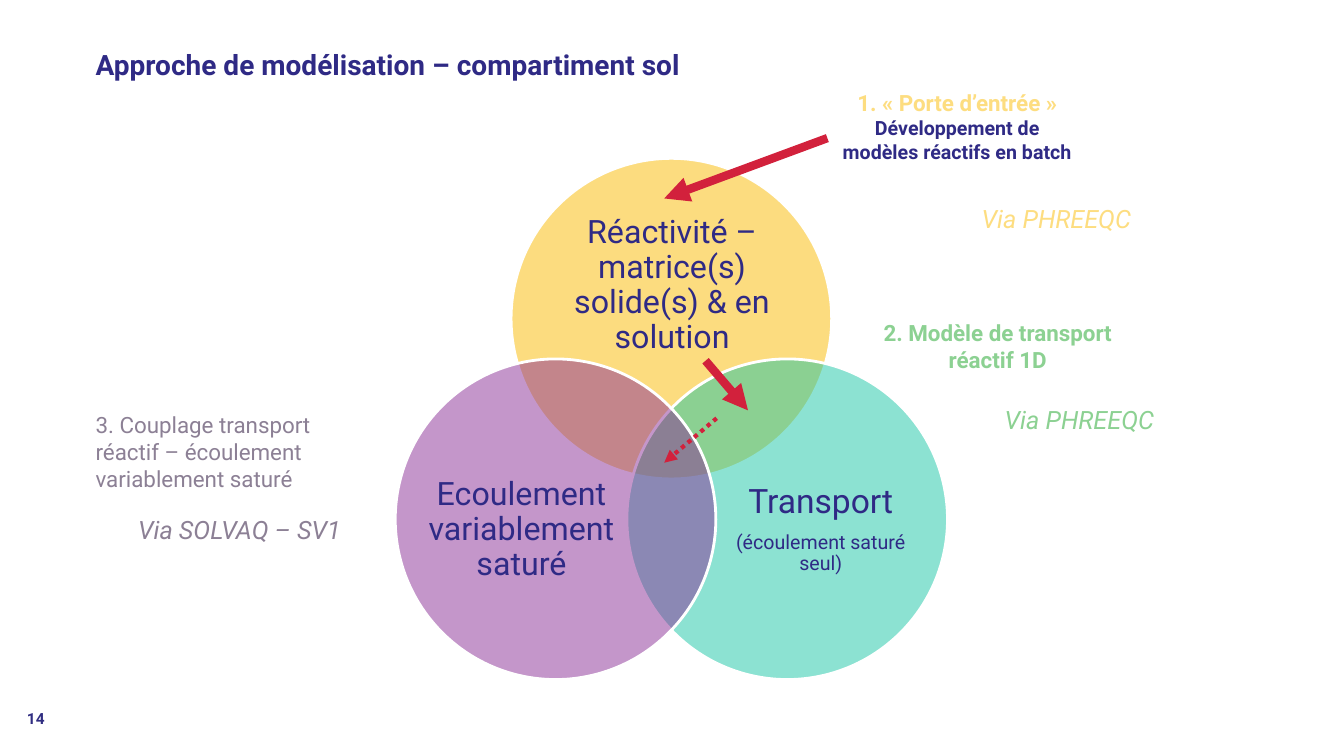
from dataclasses import dataclass
from math import cos, radians, sin

from lxml.etree import SubElement
from pptx import Presentation
from pptx.dml.color import RGBColor
from pptx.enum.dml import MSO_LINE
from pptx.enum.shapes import MSO_CONNECTOR, MSO_SHAPE
from pptx.enum.text import MSO_ANCHOR, PP_ALIGN
from pptx.oxml.ns import qn
from pptx.util import Cm, Pt


@dataclass(frozen=True)
class Theme:
    font: str = "Roboto"
    navy: str = "2F2A85"
    number_navy: str = "312E82"
    white: str = "FFFFFF"
    red: str = "D2213C"
    reactivity: str = "FBBA00"
    transport: str = "1BC6A6"
    flow: str = "8B2F97"
    yellow: str = "FDDD80"
    green: str = "8CD192"
    mauve: str = "8C8095"
    title: int = 20
    transport_name: int = 24
    circle_name: int = 23
    tool: int = 18
    step: int = 16
    detail: int = 14
    number: int = 11


class SlideBuilder:
    def __init__(self, slide, theme):
        self.shapes = slide.shapes
        self.theme = theme

    def circle(self, center_x, center_y, diameter, color):
        disc = self.shapes.add_shape(
            MSO_SHAPE.OVAL, Cm(center_x - diameter / 2), Cm(center_y - diameter / 2),
            Cm(diameter), Cm(diameter))
        disc.shadow.inherit = False
        disc.fill.solid()
        disc.fill.fore_color.rgb = RGBColor.from_string(color)
        tint = disc._element.spPr.find(qn("a:solidFill"))[0]
        SubElement(tint, qn("a:alpha"), val="50000")
        disc.line.color.rgb = RGBColor.from_string(self.theme.white)
        disc.line.width = Pt(2)

    def text(self, box, lines, align=PP_ALIGN.LEFT, anchor=MSO_ANCHOR.TOP,
             inset=True, **paragraph_format):
        """Write lines of (text, font format) into a box of left, top, width, height."""
        frame = self.shapes.add_textbox(*map(Cm, box)).text_frame
        frame.word_wrap = True
        frame.vertical_anchor = anchor
        if not inset:
            for side in ("left", "top", "right", "bottom"):
                setattr(frame, f"margin_{side}", 0)
        for index, (words, font_format) in enumerate(lines):
            paragraph = frame.add_paragraph() if index else frame.paragraphs[0]
            for name, value in {"alignment": align, **paragraph_format}.items():
                setattr(paragraph, name, value)
            run = paragraph.add_run()
            run.text = words
            run.font.name = self.theme.font
            for name, value in font_format.items():
                if name == "color":
                    run.font.color.rgb = RGBColor.from_string(value)
                else:
                    setattr(run.font, name, value)

    def circle_label(self, box, lines):
        self.text(box, lines, PP_ALIGN.CENTER, MSO_ANCHOR.MIDDLE, inset=False,
                  line_spacing=0.9, space_after=Pt(8.4))

    def arrow(self, start, end, width, dash=None):
        connector = self.shapes.add_connector(
            MSO_CONNECTOR.STRAIGHT, *map(Cm, start + end))
        connector.line.color.rgb = RGBColor.from_string(self.theme.red)
        connector.line.width = Pt(width)
        if dash:
            connector.line.dash_style = dash
        properties = connector._element.spPr
        SubElement(properties.find(qn("a:ln")), qn("a:tailEnd"), type="triangle")
        SubElement(properties, qn("a:effectLst"))


def style(size, color, **extra):
    return {"size": Pt(size), "color": color, **extra}


def main():
    presentation = Presentation()
    presentation.slide_width, presentation.slide_height = Cm(33.87), Cm(19.05)
    theme = Theme()
    slide = SlideBuilder(
        presentation.slides.add_slide(presentation.slide_layouts[6]), theme)

    # Three circles, 120° apart around the centre of the Venn diagram
    venn_x, venn_y, spread, diameter = 16.92, 11.4, 3.37, 8.08
    circle_name = style(theme.circle_name, theme.navy)
    compartments = [
        (theme.reactivity, (13.97, 5.38, 5.94, 3.63),
         [("Réactivité – matrice(s) solide(s) & en solution", circle_name)]),
        (theme.transport, (18.26, 11.13, 4.85, 4.45),
         [("Transport", style(theme.transport_name, theme.navy)),
          ("(écoulement saturé seul)", style(theme.detail, theme.navy))]),
        (theme.flow, (10.72, 11.13, 4.85, 4.45),
         [("Ecoulement variablement saturé", circle_name)]),
    ]
    for index, (color, label_box, label) in enumerate(compartments):
        angle = radians(120 * index)
        slide.circle(venn_x + spread * sin(angle), venn_y - spread * cos(angle),
                     diameter, color)
        slide.circle_label(label_box, label)

    slide.text((2.16, 1.07, 29.16, 1.27),
               [("Approche de modélisation – compartiment sol",
                 style(theme.title, theme.navy, bold=True))])
    slide.text((0.43, 17.58, 7.62, 1.02),
               [("14", style(theme.number, theme.number_navy, bold=True))],
               anchor=MSO_ANCHOR.MIDDLE)

    steps = [
        ((20.85, 2.13, 6.55, 2.74), PP_ALIGN.CENTER,
         [("1. « Porte d’entrée »", style(theme.step, theme.yellow, bold=True)),
          ("Développement de modèles réactifs en batch",
           style(theme.detail, theme.navy, bold=True))]),
        ((21.87, 7.92, 6.55, 1.63), PP_ALIGN.CENTER,
         [("2. Modèle de transport réactif 1D",
           style(theme.step, theme.green, bold=True))]),
        ((2.16, 10.24, 6.68, 2.31), PP_ALIGN.LEFT,
         [("3. Couplage transport réactif – écoulement variablement saturé",
           style(theme.step, theme.mauve))]),
    ]
    for box, align, lines in steps:
        slide.text(box, lines, align)

    tools = [
        ((24.49, 5.01, 4.67, 1.02), "Via PHREEQC", theme.yellow),
        ((25.07, 10.06, 4.67, 1.02), "Via PHREEQC", theme.green),
        ((3.23, 12.83, 6.35, 1.02), "Via SOLVAQ – SV1", theme.mauve),
    ]
    for box, tool, color in tools:
        slide.text(box, [(tool, style(theme.tool, color, italic=True))])

    slide.arrow((20.85, 3.48), (16.74, 5.0), 6)
    slide.arrow((17.78, 9.09), (18.85, 10.34), 6)
    slide.arrow((18.06, 10.54), (16.74, 11.66), 3, MSO_LINE.ROUND_DOT)

    presentation.save("out.pptx")


if __name__ == "__main__":
    main()
